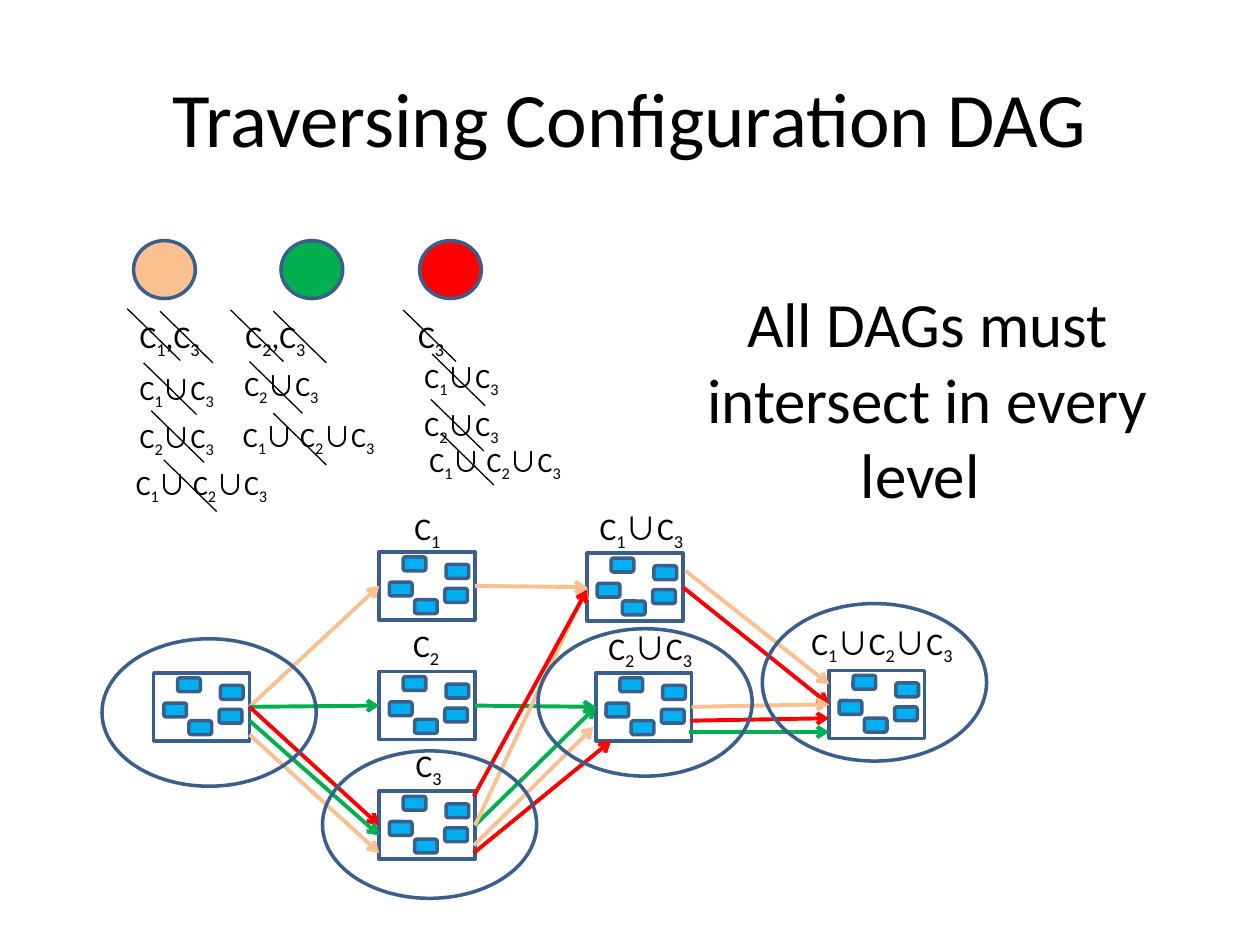
from itertools import groupby

from lxml.etree import SubElement
from pptx import Presentation
from pptx.dml.color import RGBColor
from pptx.enum.shapes import MSO_CONNECTOR as Connector, MSO_SHAPE as Shape
from pptx.enum.text import MSO_ANCHOR as Anchor, MSO_AUTO_SIZE as AutoSize, PP_ALIGN as Align
from pptx.oxml.ns import qn
from pptx.util import Inches, Pt

COLORS = {
    "black": "000000",
    "outline": "3A5F8C",
    "chip": "00B0F0",
    "peach": "FAC090",
    "green": "00B050",
    "red": "FF0000",
}
LABEL = {"word_wrap": True, "auto_size": AutoSize.SHAPE_TO_FIT_TEXT}
TITLE = {"word_wrap": True, "vertical_anchor": Anchor.MIDDLE}
TOP, LEFT, BOTTOM, RIGHT = range(4)


def add_outlined(shapes, kind, place, fill=None):
    item = shapes.add_shape(kind, *map(Inches, place))
    item.shadow.inherit = False
    item.line.color.rgb = RGBColor.from_string(COLORS["outline"])
    item.line.width = Pt(2)
    if fill:
        item.fill.solid()
        item.fill.fore_color.rgb = RGBColor.from_string(COLORS[fill])
    else:
        item.fill.background()
    return item


def add_text(shapes, text, place, size, align=Align.LEFT, frame_format=LABEL):
    frame = shapes.add_textbox(*map(Inches, place)).text_frame
    for name, value in frame_format.items():
        setattr(frame, name, value)
    paragraph = frame.paragraphs[0]
    paragraph.alignment = align
    for (subscript, union), letters in groupby(text, lambda c: (c.isdigit(), c == "∪")):
        run = paragraph.add_run()
        run.text = "".join(letters)
        typeface = "Noto Sans CJK KR" if union else "Calibri"
        for name, value in {"name": typeface, "size": Pt(size)}.items():
            setattr(run.font, name, value)
        run.font.color.rgb = RGBColor.from_string(COLORS["black"])
        properties = run.font._element
        if subscript:
            properties.set("baseline", "-25000")
        if union:
            SubElement(properties, qn("a:ea")).set("typeface", typeface)


deck = Presentation()
deck.slide_width, deck.slide_height = Inches(10), Inches(7.5)
slide = deck.slides.add_slide(deck.slide_layouts[6])
shapes = slide.shapes

add_text(shapes, "Traversing Configuration DAG", (0.5, 0.3, 9, 1.25), 44, Align.CENTER, TITLE)

for x, color in [(1.06, "peach"), (2.23, "green"), (3.33, "red")]:
    add_outlined(shapes, Shape.OVAL, (x, 1.91, 0.49, 0.46), color)

configurations = {
    "start": (1.22, 5.34, None),
    "C1": (3.01, 4.38, (3.19, 3.99, 0.45)),
    "C2": (3.01, 5.33, (3.18, 4.92, 0.45)),
    "C3": (3.01, 6.28, (3.2, 5.87, 0.45)),
    "C1∪C3": (4.66, 4.39, (4.66, 3.99, 0.92)),
    "C2∪C3": (4.73, 5.34, (4.73, 4.94, 0.92)),
    "C1∪C2∪C3": (6.58, 5.32, (6.34, 4.9, 1.42)),
}
chip_offsets = [(0.19, 0.04), (0.52, 0.29), (0.08, 0.24), (0.53, 0.1), (0.28, 0.38)]
boxes = {}
for name, (x, y, label_place) in configurations.items():
    node = shapes.add_group_shape().shapes
    for dx, dy in chip_offsets:
        add_outlined(node, Shape.ROUNDED_RECTANGLE, (x + dx, y + dy, 0.18, 0.11), "chip")
    boxes[name] = add_outlined(node, Shape.RECTANGLE, (x, y, 0.76, 0.54))
    if label_place:
        add_text(node, name, (*label_place, 0.4), 18)

arrows = [
    ("start", "C1", "peach"),
    ("start", "C2", "green"),
    ("start", "C3", "red"),
    ((1.98, 5.72), (3.01, 6.63), "green"),
    ((1.98, 5.83), (3.01, 6.77), "peach"),
    ("C1", "C1∪C3", "peach"),
    ("C2", "C2∪C3", "green"),
    ("C3", "C2∪C3", "green"),
    ("C3", "C1∪C3", "peach"),
    ((3.76, 6.71), (4.71, 5.77), "peach"),
    ((3.76, 6.32), (4.66, 4.68), "red"),
    ((3.76, 6.77), (4.85, 5.88), "red"),
    ("C1∪C3", "C1∪C2∪C3", "red"),
    ((5.44, 4.53), (6.58, 5.43), "peach"),
    ("C2∪C3", "C1∪C2∪C3", "peach"),
    ((5.48, 5.72), (6.58, 5.7), "red"),
    ((5.47, 5.81), (6.58, 5.81), "green"),
]
strike_starts = [
    (1.83, 2.46), (1.01, 2.45), (2.17, 2.47), (1.27, 2.47), (3.2, 2.46),
    (3.43, 2.81), (1.14, 2.88), (1.2, 3.26), (3.42, 3.17), (1.98, 2.87),
    (2.17, 3.28), (1.3, 3.65), (3.5, 3.44),
]
strikes = [((x, y), (x + 0.42, y + 0.41), "black") for x, y in strike_starts]
for begin, end, color in arrows + strikes:
    joined = begin in boxes
    points = (0, 0, 0, 0) if joined else begin + end
    line = shapes.add_connector(Connector.STRAIGHT, *map(Inches, points))
    if joined:
        line.begin_connect(boxes[begin], RIGHT)
        line.end_connect(boxes[end], LEFT)
    line.line.color.rgb = RGBColor.from_string(COLORS[color])
    line.line.width = Pt(0.75 if color == "black" else 2.25)
    if color != "black":
        SubElement(line.line._get_or_add_ln(), qn("a:tailEnd")).set("type", "arrow")
    SubElement(line._element.spPr, qn("a:effectLst"))

add_text(shapes, "All DAGs must intersect in every level ", (5.18, 2.21, 4.36, 1.92), 36, Align.CENTER)

for place in [
    (2.56, 5.96, 1.7, 1.17),
    (4.27, 4.99, 1.7, 1.17),
    (6.05, 4.79, 1.78, 1.25),
    (0.81, 5.07, 1.7, 1.17),
]:
    add_outlined(shapes, Shape.OVAL, place)

candidates = [
    ("C1,C3", 1.01, 2.47, 0.84, 18),
    ("C2,C3", 1.85, 2.47, 0.84, 18),
    ("C3", 3.22, 2.47, 0.84, 18),
    ("C1∪ C2∪C3", 1.83, 3.28, 1.36, 16),
    ("C1∪ C2∪C3", 0.98, 3.66, 1.36, 16),
    ("C1∪C3", 1.01, 2.91, 0.92, 16),
    ("C2∪C3", 1.84, 2.88, 0.92, 16),
    ("C2∪C3", 1.01, 3.29, 0.92, 16),
    ("C1∪C3", 3.27, 2.81, 0.92, 16),
    ("C2∪C3", 3.27, 3.19, 0.92, 16),
    ("C1∪ C2∪C3", 3.31, 3.48, 1.36, 16),
]
for text, x, y, width, size in candidates:
    add_text(shapes, text, (x, y, width, 0.4 if size == 18 else 0.37), size)

deck.save("out.pptx")
